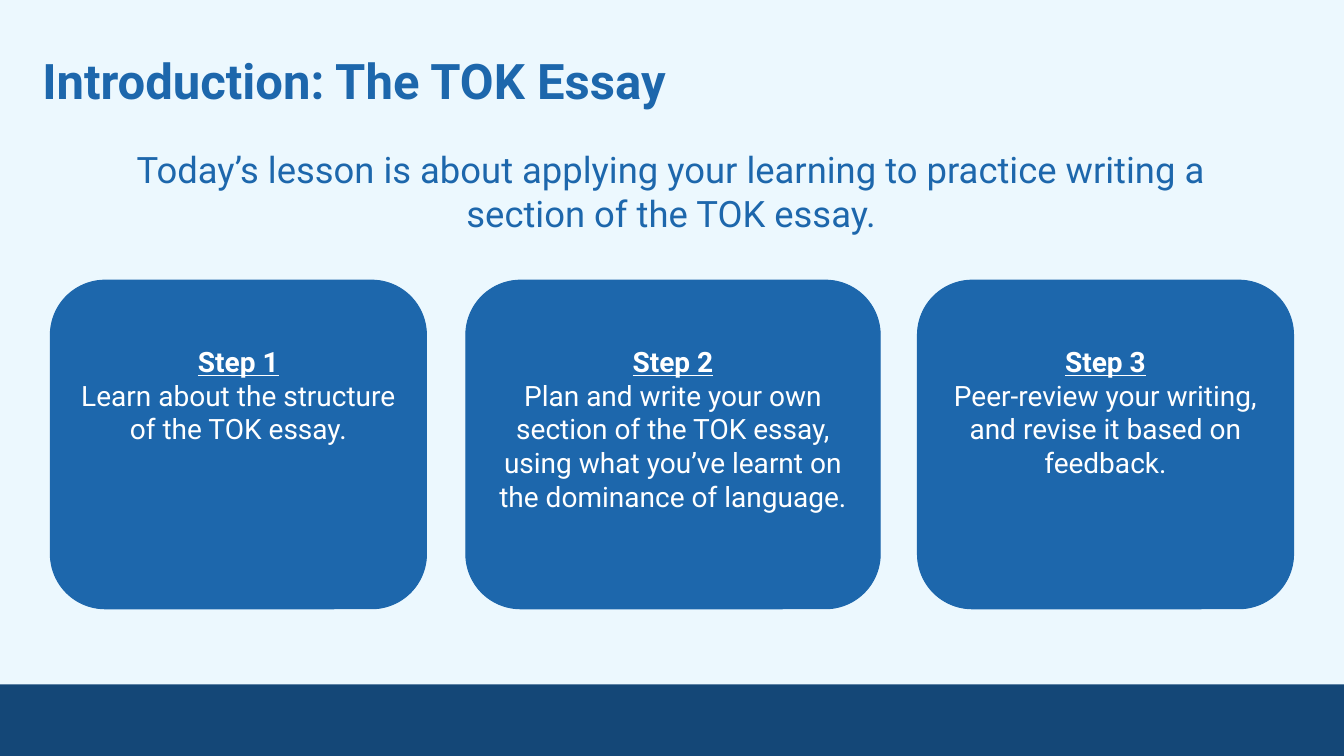
"""Build the slide that introduces the three steps of the TOK essay lesson."""
from dataclasses import dataclass

import pptx
import pptx.dml.color
import pptx.enum.shapes
import pptx.enum.text
import pptx.util

Inches = pptx.util.Inches
RGBColor = pptx.dml.color.RGBColor
Shapes = pptx.enum.shapes.MSO_SHAPE
Align = pptx.enum.text.PP_ALIGN
Anchor = pptx.enum.text.MSO_ANCHOR

PALE = RGBColor(0xEC, 0xF8, 0xFE)
BLUE = RGBColor(0x1D, 0x67, 0xAC)
NAVY = RGBColor(0x14, 0x47, 0x77)
WHITE = RGBColor(0xFF, 0xFF, 0xFF)
FONT = "Roboto"


@dataclass
class Step:
    heading: str
    task: str
    left: float
    width: float


STEPS = [
    Step("Step 1", "Learn about the structure of the TOK essay.", 0.5, 3.73),
    Step("Step 2", "Plan and write your own section of the TOK essay, "
         "using what you’ve learnt on the dominance of language.", 4.62, 4.11),
    Step("Step 3", "Peer-review your writing, and revise it based on feedback.",
         9.1, 3.73),
]


def prepare_frame(box, inset: float, anchor) -> None:
    frame = box.text_frame
    frame.word_wrap = True
    frame.auto_size = pptx.enum.text.MSO_AUTO_SIZE.NONE
    frame.vertical_anchor = anchor
    frame.margin_left = frame.margin_right = Inches(inset)
    frame.margin_top = frame.margin_bottom = Inches(inset)


def write(para, text: str, size: int, color, align, bold: bool = False,
          underline: bool = False) -> None:
    para.text = text
    para.alignment = align
    font = para.font
    font.name, font.size, font.bold = FONT, pptx.util.Pt(size), bold
    font.underline = underline
    font.color.rgb = color


def add_panel(page, kind, left: float, top: float, width: float,
              height: float, color):
    panel = page.shapes.add_shape(kind, Inches(left), Inches(top),
                                  Inches(width), Inches(height))
    panel.shadow.inherit = False
    panel.fill.solid()
    panel.fill.fore_color.rgb = color
    panel.line.color.rgb = color
    panel.line.width = pptx.util.Pt(0.75)
    return panel


def add_step(page, step: Step) -> None:
    card = add_panel(page, Shapes.ROUNDED_RECTANGLE, step.left, 2.78,
                     step.width, 3.26, BLUE)
    prepare_frame(card, 0.1, Anchor.TOP)
    frame = card.text_frame
    frame.margin_top = Inches(0.48)
    write(frame.paragraphs[0], step.heading, 20, WHITE, Align.CENTER,
          bold=True, underline=True)
    write(frame.add_paragraph(), step.task, 20, WHITE, Align.CENTER)


def main() -> None:
    deck = pptx.Presentation()
    deck.slide_width, deck.slide_height = Inches(13.33), Inches(7.5)
    page = deck.slides.add_slide(deck.slide_layouts[5])
    page.background.fill.solid()
    page.background.fill.fore_color.rgb = PALE

    footer = add_panel(page, Shapes.RECTANGLE, -0.02, 6.79, 13.37, 0.71, NAVY)
    footer.line.fill.background()

    title = page.shapes.title
    title.left, title.top = Inches(0.29), Inches(0.35)
    title.width, title.height = Inches(12.19), Inches(0.86)
    prepare_frame(title, 0.13, Anchor.BOTTOM)
    write(title.text_frame.paragraphs[0], "Introduction: The TOK Essay", 35,
          BLUE, Align.LEFT, bold=True)

    summary = page.shapes.add_textbox(Inches(0.91), Inches(1.36),
                                      Inches(11.5), Inches(1.08))
    prepare_frame(summary, 0.1, Anchor.TOP)
    write(summary.text_frame.paragraphs[0],
          "Today’s lesson is about applying your learning to practice "
          "writing a section of the TOK essay.", 26, BLUE, Align.CENTER)

    for step in STEPS:
        add_step(page, step)
    deck.save("out.pptx")


if __name__ == "__main__":
    main()
